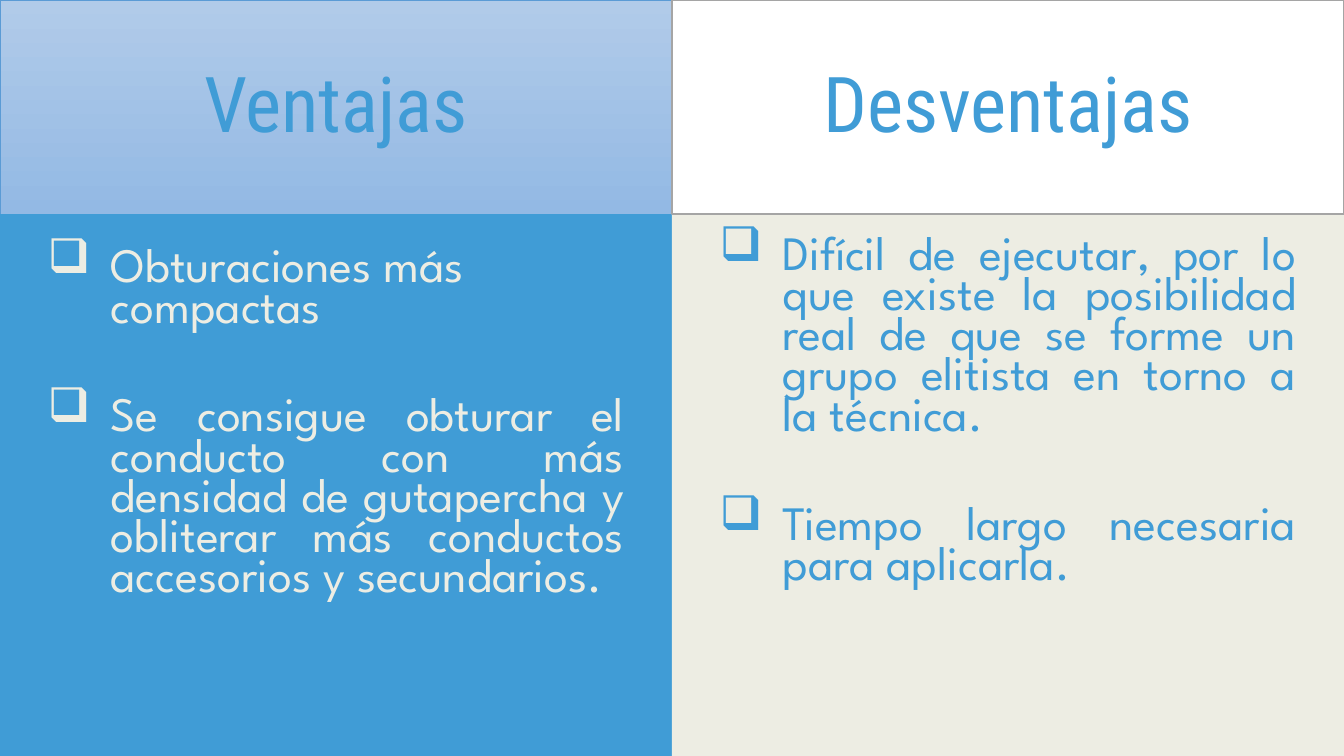
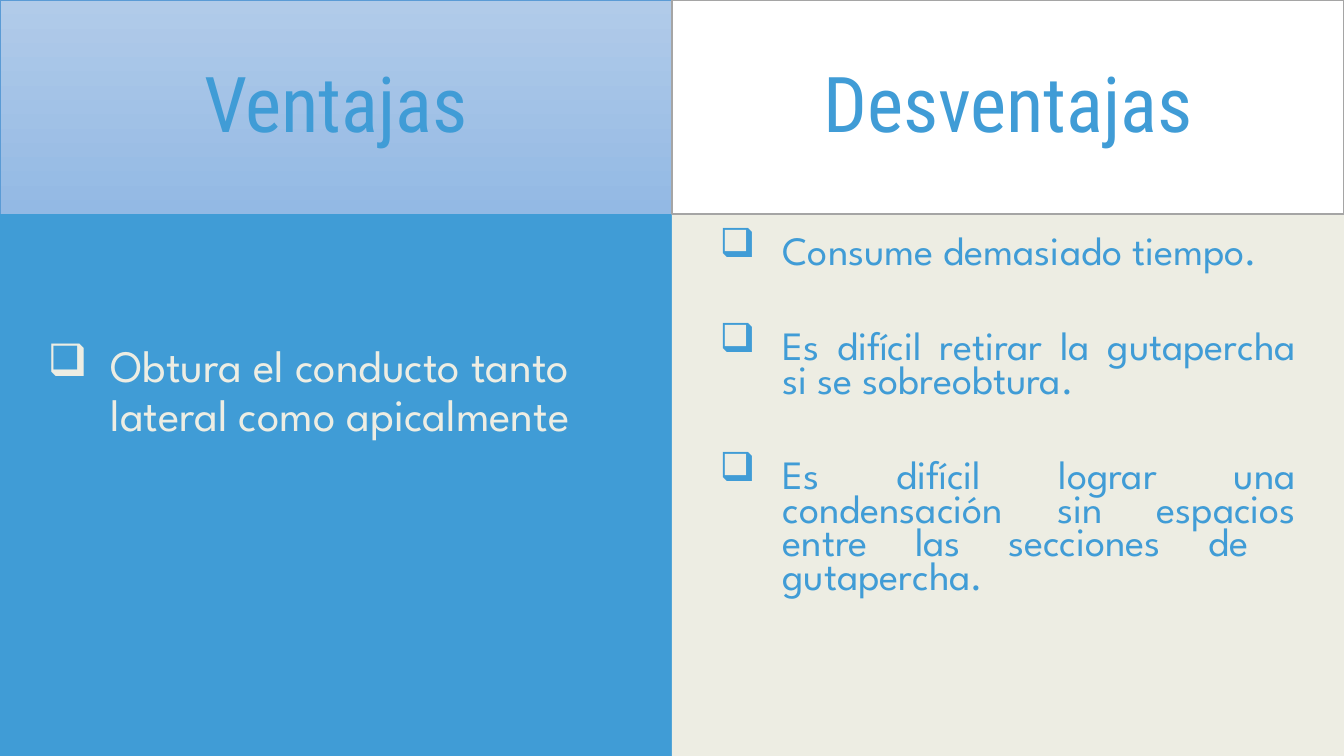
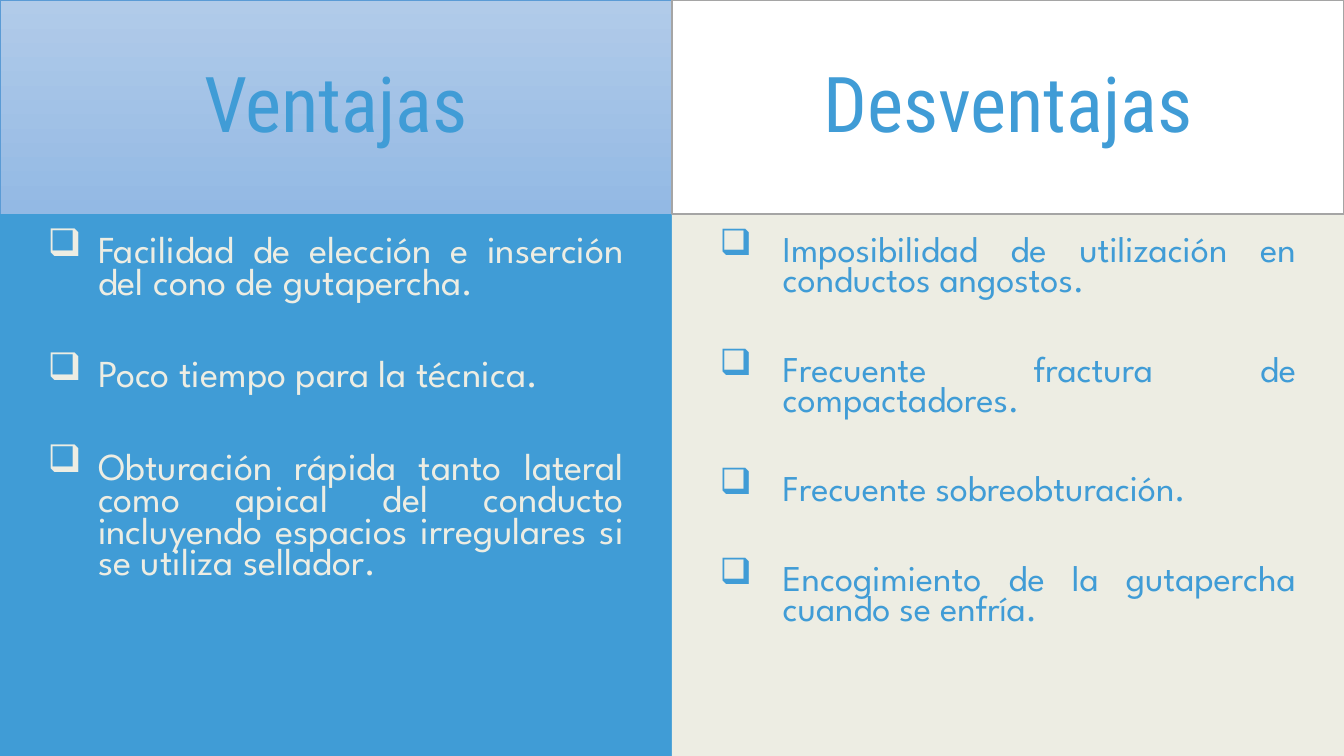
import lxml.etree
import pptx
import pptx.dml.color
import pptx.enum.shapes
import pptx.enum.text
import pptx.oxml.ns
import pptx.util

PX = 9525
BLUE, CREAM, WHITE = "409CD6", "EDEDE3", "FFFFFF"
HALF, HEADER, HEIGHT = 640, 204, 720
BODY_LEFT, BODY_WIDTH, BODY_TOP, BODY_BOTTOM = 36, 568, 222, 690
ALIGN = pptx.enum.text.PP_ALIGN
RECTANGLE = pptx.enum.shapes.MSO_SHAPE.RECTANGLE


def color(value):
    return pptx.dml.color.RGBColor.from_string(value)


def write(shape, lines, *, font, size, fill, align, spacing, anchor="TOP", gap=0, indent=0):
    frame = shape.text_frame
    frame.word_wrap = True
    frame.auto_size = pptx.enum.text.MSO_AUTO_SIZE.NONE
    frame.vertical_anchor = pptx.enum.text.MSO_ANCHOR[anchor]
    for index, line in enumerate(lines):
        paragraph = frame.add_paragraph() if index else frame.paragraphs[0]
        paragraph.text = line
        paragraph.alignment = align
        paragraph.line_spacing = spacing
        paragraph.space_before = pptx.util.Pt(gap if index else 0)
        if indent:
            properties = paragraph._p.get_or_add_pPr()
            properties.set("marL", str(indent * PX))
            properties.set("indent", str(-indent * PX))
            bullet = lxml.etree.SubElement(properties, pptx.oxml.ns.qn("a:buChar"))
            bullet.set("char", "❑")
        paragraph.font.name = font
        paragraph.font.size = pptx.util.Pt(size)
        paragraph.font.color.rgb = color(fill)


slides = [
    (
        dict(top=234, size=34.2, indent=60, spacing=0.7, aligns=[ALIGN.LEFT, ALIGN.JUSTIFY], lines=[
            "Obturaciones más compactas",
            "Se consigue obturar el conducto con más densidad de gutapercha y obliterar más conductos accesorios y secundarios.",
        ]),
        dict(top=BODY_TOP, size=34.2, indent=60, spacing=0.7, aligns=[ALIGN.JUSTIFY], lines=[
            "Difícil de ejecutar, por lo que existe la posibilidad real de que se forme un grupo elitista en torno a la técnica.",
            "Tiempo largo necesaria para aplicarla.",
        ]),
    ),
    (
        dict(top=323, size=32, indent=60, spacing=0.9, aligns=[ALIGN.LEFT], lines=[
            "Obtura el conducto tanto lateral como apicalmente",
        ]),
        dict(top=BODY_TOP, size=28.7, indent=60, spacing=0.7, aligns=[ALIGN.JUSTIFY], lines=[
            "Consume demasiado tiempo.",
            "Es difícil retirar la gutapercha si se sobreobtura.",
            "Es difícil lograr una condensación sin espacios entre las secciones de  gutapercha.",
        ]),
    ),
    (
        dict(top=BODY_TOP, size=27.2, indent=48, spacing=0.7, aligns=[ALIGN.JUSTIFY], lines=[
            "Facilidad de elección e inserción del cono de gutapercha.",
            "Poco tiempo para la técnica.",
            "Obturación rápida tanto lateral como apical del conducto incluyendo espacios irregulares si se utiliza sellador.",
        ]),
        dict(top=BODY_TOP, size=25.9, indent=60, spacing=0.7, aligns=[ALIGN.JUSTIFY], lines=[
            "Imposibilidad de utilización en conductos angostos.",
            "Frecuente fractura de compactadores.",
            "Frecuente sobreobturación.",
            "Encogimiento de la gutapercha cuando se enfría.",
        ]),
    ),
]

sides = [("Ventajas", BLUE, CREAM, "5B9BD5", 0.5), ("Desventajas", CREAM, BLUE, "A5A5A5", 1)]

presentation = pptx.Presentation()
presentation.slide_width = 2 * HALF * PX
presentation.slide_height = HEIGHT * PX

for columns in slides:
    slide = presentation.slides.add_slide(presentation.slide_layouts[5])
    for side, (heading, panel_fill, text_fill, outline, outline_width) in enumerate(sides):
        column = columns[side]
        left = side * HALF

        panel = slide.shapes.add_shape(
            RECTANGLE, left * PX, HEADER * PX, HALF * PX, (HEIGHT - HEADER) * PX)
        panel.shadow.inherit = False
        panel.fill.solid()
        panel.fill.fore_color.rgb = color(panel_fill)
        panel.line.fill.background()

        if side == 0:
            header = slide.shapes.title
            header.left, header.top = 0, 0
            header.width, header.height = HALF * PX, HEADER * PX
            header.fill.gradient()
            header.fill.gradient_angle = 270
            for stop, value in zip(header.fill.gradient_stops, ["B1CBE9", "93B9E4"]):
                stop.color.rgb = color(value)
        else:
            header = slide.shapes.add_shape(RECTANGLE, left * PX, 0, HALF * PX, HEADER * PX)
            header.shadow.inherit = False
            header.fill.solid()
            header.fill.fore_color.rgb = color(WHITE)
        header.line.color.rgb = color(outline)
        header.line.width = pptx.util.Pt(outline_width)
        write(header, [heading], font="Roboto Condensed", size=55, fill=BLUE,
              align=ALIGN.CENTER, spacing=0.9, anchor="MIDDLE")

        body = slide.shapes.add_textbox(
            (left + BODY_LEFT) * PX, column["top"] * PX,
            BODY_WIDTH * PX, (BODY_BOTTOM - column["top"]) * PX)
        write(body, column["lines"], font="League Spartan", size=column["size"],
              fill=text_fill, align=ALIGN.JUSTIFY, spacing=column["spacing"],
              gap=round(20 + 0.84 * column["size"]), indent=column["indent"])
        for paragraph, align in zip(body.text_frame.paragraphs, column["aligns"]):
            paragraph.alignment = align

presentation.save("out.pptx")
